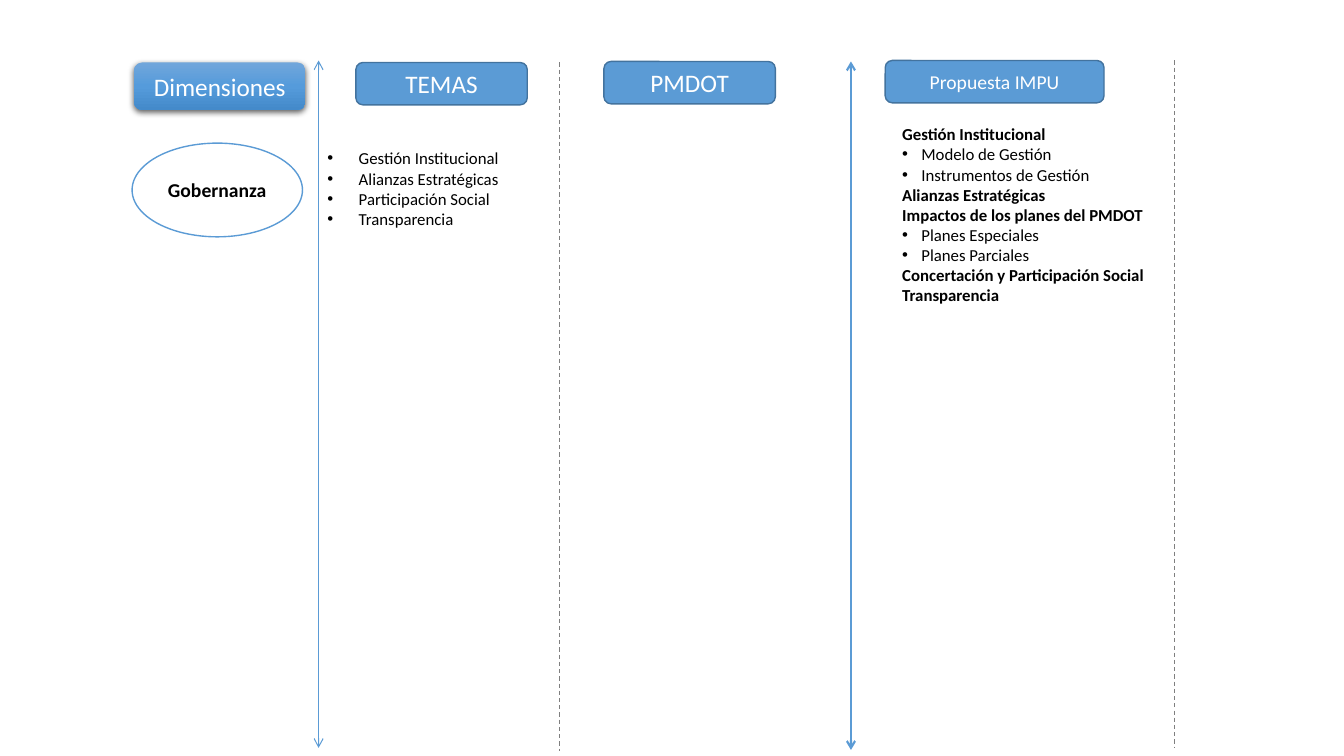
from dataclasses import dataclass

from lxml import etree
from pptx import Presentation
from pptx.dml.color import RGBColor
from pptx.enum.dml import MSO_LINE
from pptx.enum.shapes import MSO_CONNECTOR, MSO_SHAPE
from pptx.enum.text import MSO_ANCHOR, PP_ALIGN
from pptx.oxml import parse_xml
from pptx.oxml.ns import nsdecls, qn
from pptx.util import Emu, Pt

ROUNDED = MSO_SHAPE.ROUNDED_RECTANGLE
OVAL = MSO_SHAPE.OVAL
STRAIGHT = MSO_CONNECTOR.STRAIGHT
DASH = MSO_LINE.DASH
MIDDLE = MSO_ANCHOR.MIDDLE
CENTER = PP_ALIGN.CENTER
JUSTIFY = PP_ALIGN.JUSTIFY
EMU_PER_PX = 9144


@dataclass(frozen=True)
class Theme:
    font: str = "Calibri"
    blue: str = "5B9BD5"
    border: str = "43739E"
    divider: str = "7F7F7F"
    white: str = "FFFFFF"
    black: str = "000000"
    gradient: tuple = ((0, "71A6DB"), (50, "559BDB"), (100, "448ACA"))
    heading: int = 18
    label: int = 14
    body: int = 12


THEME = Theme()


def px(length):
    return Emu(length * EMU_PER_PX)


def rgb(color):
    return RGBColor.from_string(color)


def add_span(para, text, size=THEME.body, color=THEME.black, bold=False):
    span = para.add_run()
    span.text = text
    span.font.name = THEME.font
    span.font.size = Pt(size)
    span.font.bold = bold
    span.font.color.rgb = rgb(color)


def add_bullet(para, indent):
    properties = para._p.get_or_add_pPr()
    properties.set("marL", str(px(indent)))
    properties.set("indent", str(-px(indent)))
    etree.SubElement(properties, qn("a:buFont")).set("typeface", "Arial")
    etree.SubElement(properties, qn("a:buChar")).set("char", "•")


def add_label(page, kind, at, text, fill=THEME.blue, border=THEME.border, **text_format):
    box = page.shapes.add_shape(kind, *map(px, at))
    box.shadow.inherit = False
    box.fill.solid()
    box.fill.fore_color.rgb = rgb(fill)
    box.line.color.rgb = rgb(border)
    box.line.width = Pt(1)
    frame = box.text_frame
    frame.word_wrap = True
    frame.vertical_anchor = MIDDLE
    para = frame.paragraphs[0]
    para.alignment = CENTER
    add_span(para, text, **text_format)
    return box


def make_raised(box):
    box.line.fill.background()
    box.fill.gradient()
    properties = box._element.spPr
    stops = "".join(
        f'<a:gs pos="{position * 1000}"><a:srgbClr val="{color}"/></a:gs>'
        for position, color in THEME.gradient
    )
    gradient = parse_xml(
        f'<a:gradFill {nsdecls("a")} rotWithShape="1"><a:gsLst>{stops}</a:gsLst>'
        '<a:lin ang="5400000" scaled="0"/></a:gradFill>'
    )
    properties.replace(properties.find(qn("a:gradFill")), gradient)
    shadow = parse_xml(
        f'<a:outerShdw {nsdecls("a")} blurRad="{Pt(4.5)}" dist="{Pt(1.5)}" '
        f'dir="5400000" algn="ctr" rotWithShape="0"><a:srgbClr val="{THEME.black}">'
        '<a:alpha val="63000"/></a:srgbClr></a:outerShdw>'
    )
    properties.find(qn("a:effectLst")).append(shadow)


def add_vertical(page, x, top, bottom, color, width=0.75):
    line = page.shapes.add_connector(STRAIGHT, px(x), px(top), px(x), px(bottom))
    line.line.color.rgb = rgb(color)
    line.line.width = Pt(width)
    etree.SubElement(line._element.spPr, qn("a:effectLst"))
    return line


def add_arrow(page, x, top, bottom, width=0.75):
    arrow = add_vertical(page, x, top, bottom, THEME.blue, width)
    outline = arrow.line._get_or_add_ln()
    for end in ("a:headEnd", "a:tailEnd"):
        etree.SubElement(outline, qn(end)).set("type", "arrow")


def add_divider(page, x, top, bottom):
    add_vertical(page, x, top, bottom, THEME.divider).line.dash_style = DASH


def add_list(page, at, items, indent):
    frame = page.shapes.add_textbox(*map(px, at)).text_frame
    frame.word_wrap = True
    for index, (text, bulleted) in enumerate(items):
        para = frame.add_paragraph() if index else frame.paragraphs[0]
        para.alignment = JUSTIFY
        if bulleted:
            add_bullet(para, indent)
        add_span(para, text, bold=not bulleted)


def main():
    deck = Presentation()
    deck.slide_width, deck.slide_height = px(1333), px(750)
    page = deck.slides.add_slide(deck.slide_layouts[6])

    add_arrow(page, 316, 60, 742)
    add_divider(page, 555, 62, 745)
    add_arrow(page, 844, 61, 744, width=1.5)
    add_divider(page, 1165, 60, 742)

    headings = (
        ("Dimensiones", (133, 62, 170, 47), THEME.heading),
        ("TEMAS", (353, 62, 170, 42), THEME.heading),
        ("PMDOT", (599, 61, 170, 42), THEME.heading),
        ("Propuesta IMPU", (878, 60, 217, 42), THEME.label),
    )
    boxes = [
        add_label(page, ROUNDED, at, text, size=size, color=THEME.white)
        for text, at, size in headings
    ]
    make_raised(boxes[0])
    add_label(page, OVAL, (131, 142, 169, 93), "Gobernanza", fill=THEME.white,
              border=THEME.blue, size=THEME.label, bold=True)

    topics = (
        ("Gestión Institucional", True),
        ("Alianzas Estratégicas", True),
        ("Participación Social", True),
        ("Transparencia", True),
    )
    add_list(page, (315, 142, 236, 131), topics, indent=31)
    proposal = (
        ("Gestión Institucional", False),
        ("Modelo de Gestión", True),
        ("Instrumentos de Gestión", True),
        ("Alianzas Estratégicas", False),
        ("Impactos de los planes del PMDOT", False),
        ("Planes Especiales", True),
        ("Planes Parciales", True),
        ("Concertación y Participación Social", False),
        ("Transparencia", False),
    )
    add_list(page, (885, 118, 283, 232), proposal, indent=19)
    deck.save("out.pptx")


if __name__ == "__main__":
    main()
